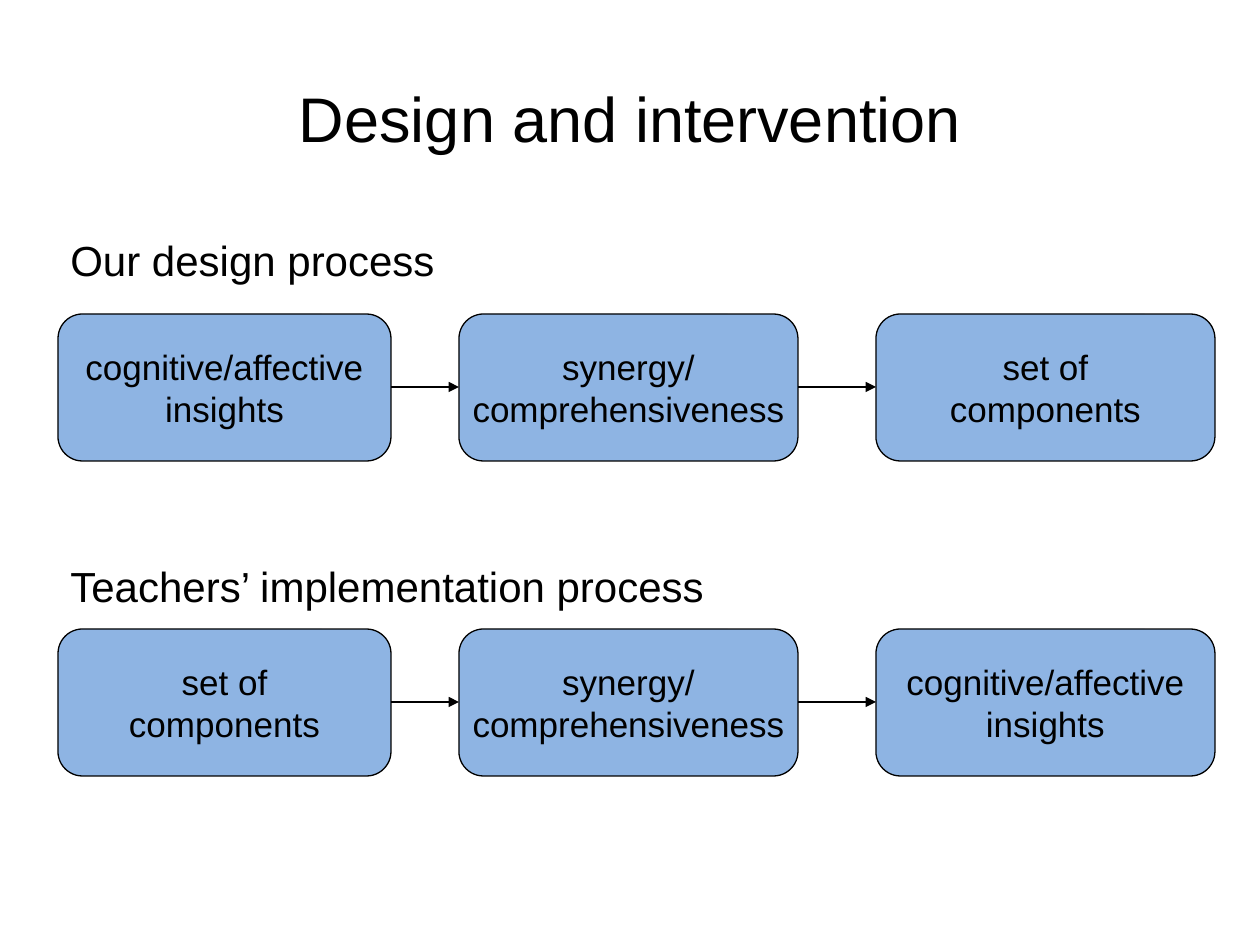
"""Build a slide comparing the design and the implementation process."""
from itertools import pairwise
from typing import NamedTuple

from lxml.etree import SubElement
from pptx import Presentation
from pptx.dml.color import RGBColor
from pptx.enum.shapes import MSO_CONNECTOR as Connector, MSO_SHAPE as Preset
from pptx.enum.text import MSO_ANCHOR as Anchor, PP_ALIGN as Align
from pptx.oxml.ns import qn
from pptx.util import Emu, Pt

BLACK = RGBColor(0x00, 0x00, 0x00)
STEP_BLUE = RGBColor(0x8E, 0xB4, 0xE3)
EMU_PER_PX = 914400 / 126
STEP_HEIGHT = 147
LABEL_HEIGHT = 63
ROUNDING = 0.167
LINE_WIDTH = 0.75


class Column(NamedTuple):
    left: int
    width: int


class Process(NamedTuple):
    label: str
    label_top: int
    label_width: int
    steps_top: int
    steps: tuple[str, str, str]


COLUMNS = (Column(58, 333), Column(459, 339), Column(876, 339))
INSIGHTS = "cognitive/affective\ninsights"
SYNERGY = "synergy/\ncomprehensiveness"
PROCESSES = (
    Process("Our design process", 228, 393, 314,
            (INSIGHTS, SYNERGY, "set of\vcomponents")),
    Process("Teachers’ implementation process", 554, 667, 629,
            ("set of\ncomponents", SYNERGY, INSIGHTS)),
)


def px(length: int) -> Emu:
    """Turn pixels into EMU."""
    return Emu(round(length * EMU_PER_PX))


def write(shape, text: str, size: int, align: Align, anchor: Anchor, wrap: bool) -> None:
    """Put formatted text into a shape."""
    frame = shape.text_frame
    frame.text = text
    frame.word_wrap = wrap
    frame.vertical_anchor = anchor
    font_format = {"name": "Arial", "size": Pt(size)}
    for paragraph in frame.paragraphs:
        paragraph.alignment = align
        for run in paragraph.runs:
            for attribute, value in font_format.items():
                setattr(run.font, attribute, value)
            run.font.color.rgb = BLACK


def outline(line) -> None:
    """Give a line the common colour and width."""
    line.color.rgb = BLACK
    line.width = Pt(LINE_WIDTH)


def draw_title(shapes, text: str) -> None:
    """Draw the centred slide title."""
    title = shapes.add_textbox(px(63), px(38), px(1134), px(158))
    write(title, text, 36, Align.CENTER, Anchor.MIDDLE, True)


def draw_step(shapes, column: Column, top: int, text: str) -> None:
    """Draw one rounded step of a process."""
    step = shapes.add_shape(Preset.ROUNDED_RECTANGLE, px(column.left), px(top),
                            px(column.width), px(STEP_HEIGHT))
    step.adjustments[0] = ROUNDING
    step.shadow.inherit = False
    step.fill.solid()
    step.fill.fore_color.rgb = STEP_BLUE
    outline(step.line)
    write(step, text, 20, Align.CENTER, Anchor.MIDDLE, False)


def draw_arrow(shapes, start: Column, end: Column, middle: int) -> None:
    """Draw an arrow across the gap between two columns."""
    arrow = shapes.add_connector(Connector.STRAIGHT, px(start.left + start.width),
                                 px(middle), px(end.left), px(middle))
    outline(arrow.line)
    SubElement(arrow.line._get_or_add_ln(), qn("a:tailEnd"), type="triangle")
    SubElement(arrow._element.spPr, qn("a:effectLst"))


def draw_process(shapes, process: Process) -> None:
    """Draw a labelled row of steps joined by arrows."""
    label = shapes.add_textbox(px(COLUMNS[0].left), px(process.label_top),
                               px(process.label_width), px(LABEL_HEIGHT))
    write(label, process.label, 24, Align.LEFT, Anchor.TOP, False)
    for column, step in zip(COLUMNS, process.steps):
        draw_step(shapes, column, process.steps_top, step)
    for start, end in pairwise(COLUMNS):
        draw_arrow(shapes, start, end, process.steps_top + STEP_HEIGHT // 2)


def main() -> None:
    """Build and save the slide."""
    deck = Presentation()
    deck.slide_width, deck.slide_height = px(1260), px(945)
    shapes = deck.slides.add_slide(deck.slide_layouts[6]).shapes
    draw_title(shapes, "Design and intervention")
    for process in PROCESSES:
        draw_process(shapes, process)
    deck.save("out.pptx")


if __name__ == "__main__":
    main()
